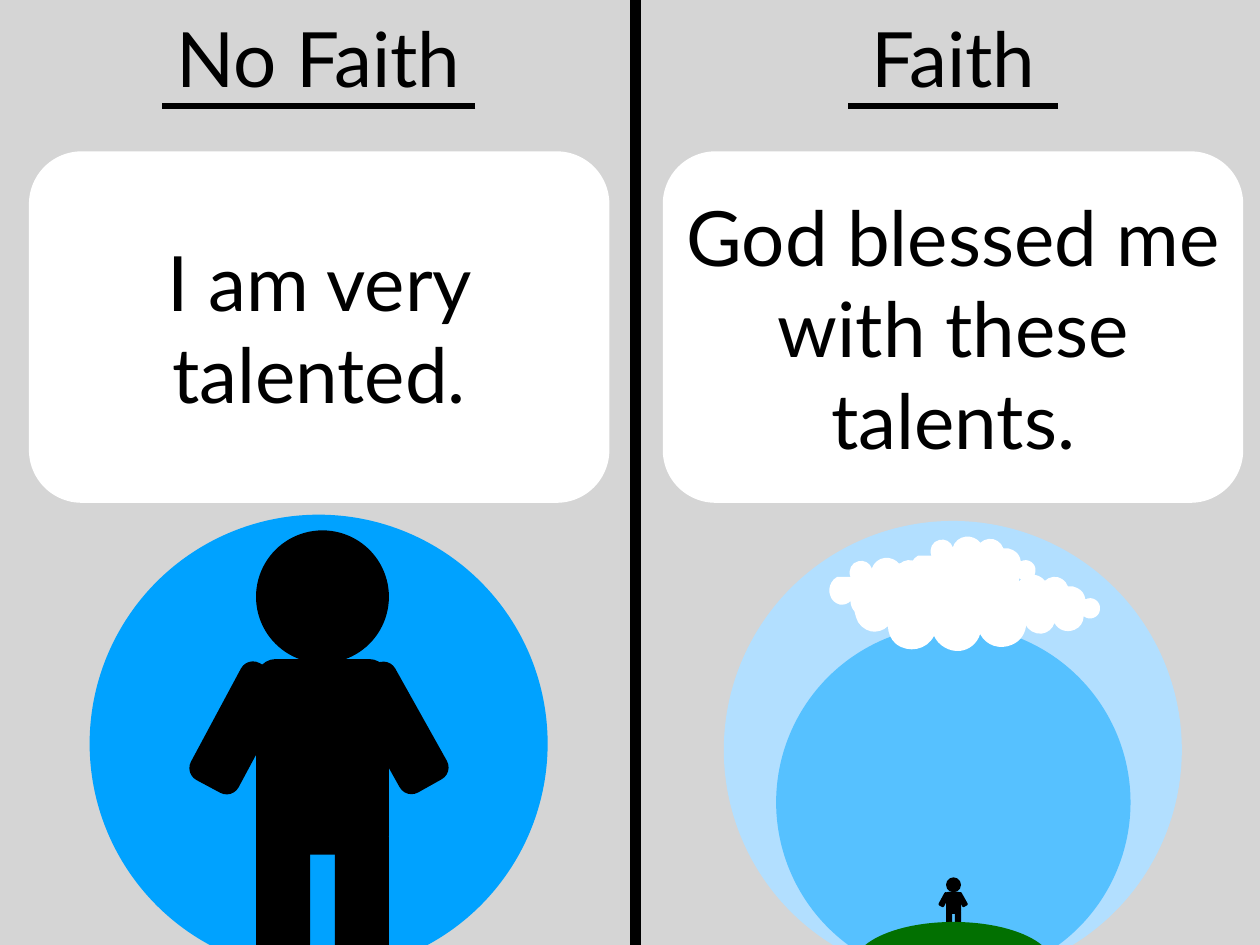
from dataclasses import dataclass

from lxml import etree
from pptx import Presentation
from pptx.dml.color import RGBColor
from pptx.enum.shapes import MSO_CONNECTOR, MSO_SHAPE
from pptx.enum.text import MSO_ANCHOR, MSO_AUTO_SIZE, PP_ALIGN
from pptx.oxml.ns import qn
from pptx.shapes.autoshape import Shape
from pptx.shapes.shapetree import GroupShapes, SlideShapes
from pptx.util import Cm, Pt

RECT, OVAL, ROUNDED = MSO_SHAPE.RECTANGLE, MSO_SHAPE.OVAL, MSO_SHAPE.ROUNDED_RECTANGLE
STRAIGHT = MSO_CONNECTOR.STRAIGHT
MIDDLE, CENTER = MSO_ANCHOR.MIDDLE, PP_ALIGN.CENTER
GROW = MSO_AUTO_SIZE.SHAPE_TO_FIT_TEXT

BLACK = RGBColor(0x00, 0x00, 0x00)
WHITE = RGBColor(0xFF, 0xFF, 0xFF)
GRAY = RGBColor(0xD5, 0xD5, 0xD5)
BLUE = RGBColor(0x00, 0xA2, 0xFF)
PALE_SKY = RGBColor(0xB2, 0xDF, 0xFF)
SKY = RGBColor(0x56, 0xC1, 0xFF)
GREEN = RGBColor(0x02, 0x70, 0x01)

WIDTH, HEIGHT = 36.12, 27.1

Point = tuple[float, float]
Box = tuple[float, float, float, float]
Shapes = SlideShapes | GroupShapes


@dataclass
class Part:
    box: Box
    corner: float
    rotation: float = 0


@dataclass
class Panel:
    title: str
    title_left: float
    underline: Point
    message: str
    bubble_left: float
    message_box: Box


HEAD = 3.81
LIMB = (1.55, 3.81)
BODY_PARTS = [
    Part((0, 3.69, HEAD, 5.61), 0.15),
    Part((0, 8.44, *LIMB), 0.25),
    Part((2.26, 8.44, *LIMB), 0.25),
    Part((-1.24, 3.76, *LIMB), 0.25, 28.2),
    Part((3.28, 3.76, *LIMB), 0.25, 330.8),
]

# Cloud edge: two control points and an end point, or one end point for a line
CLOUD_UNITS = 224
CLOUD_START = (2, 67)
CLOUD_EDGE = [
    ((4, 75), (11, 81), (19, 83)), ((26, 84), (33, 82), (38, 77)),
    ((38, 84), (41, 92), (47, 97)), ((61, 108), (82, 104), (90, 88)),
    ((95, 99), (107, 106), (119, 105)), ((130, 104), (139, 96), (142, 86)),
    ((149, 99), (164, 104), (178, 98)), ((188, 94), (194, 84), (194, 74)),
    ((205, 83), (222, 76), (223, 62)), ((225, 48), (210, 37), (197, 44)),
    ((196, 35), (191, 28), (183, 24)), ((178, 21), (172, 20), (166, 21)),
    ((162, 10), (152, 3), (140, 4)), ((134, 5), (129, 7), (125, 11)),
    ((119, 3), (109, -1), (99, 0)), ((88, 1), (79, 9), (76, 19)),
    ((73, 9), (62, 3), (52, 6)), ((40, 8), (33, 22), (38, 34)),
    ((14, 34),), ((10, 36), (6, 40), (4, 44)), ((0, 51), (-1, 60), (2, 67)),
]
CLOUDS = [(24.49, 16, 5.69), (23.77, 16, 3.61), (27.94, 16.48, 3.61), (26.09, 15.39, 3.61)]

PANELS = [
    Panel("No Faith", 1.09, (4.65, 13.63), "I am very talented.",
          0.83, (1.46, 6.28, 15.37, 6.2)),
    Panel("Faith", 19.28, (24.32, 30.33), "God blessed me with these talents.",
          19, (19.28, 4.8, 16.1, 9.17)),
]


def paint(sp: Shape, color: RGBColor) -> None:
    sp.shadow.inherit = False
    sp.fill.solid()
    sp.fill.fore_color.rgb = color
    sp.line.fill.background()


def add_filled(shapes: Shapes, kind: MSO_SHAPE, box: Box, color: RGBColor,
               corner: float | None = None, rotation: float = 0) -> None:
    sp = shapes.add_shape(kind, *(Cm(v) for v in box))
    paint(sp, color)
    sp.rotation = rotation
    if corner is not None:
        sp.adjustments[0] = corner


def add_line(shapes: Shapes, start: Point, end: Point, width: float) -> None:
    line = shapes.add_connector(STRAIGHT, *(Cm(v) for v in (*start, *end)))
    line.line.color.rgb = BLACK
    line.line.width = Pt(width)
    etree.SubElement(line._element.spPr, qn("a:effectLst"))


def add_text(shapes: Shapes, text: str, box: Box, *, size: float = 62,
             font: str = "Lato", color: RGBColor = BLACK) -> None:
    tf = shapes.add_textbox(*(Cm(v) for v in box)).text_frame
    tf.word_wrap = True
    tf.auto_size = GROW
    tf.vertical_anchor = MIDDLE
    tf.margin_left = tf.margin_right = tf.margin_top = tf.margin_bottom = Cm(0.15)
    p = tf.paragraphs[0]
    p.alignment = CENTER
    r = p.add_run()
    r.text = text
    r.font.size, r.font.name = Pt(size), font
    r.font.color.rgb = color


def add_person(shapes: Shapes, left: float, top: float, head: float) -> None:
    scale = head / HEAD
    add_filled(shapes, OVAL, (left, top, head, head), BLACK)
    for part in BODY_PARTS:
        x, y, w, h = (v * scale for v in part.box)
        add_filled(shapes, ROUNDED, (left + x, top + y, w, h), BLACK,
                   part.corner, part.rotation)


def add_cloud(shapes: Shapes, left: float, top: float, width: float) -> None:
    unit = width / CLOUD_UNITS

    def place(point: Point) -> tuple[Cm, Cm]:
        return Cm(left + point[0] * unit), Cm(top + point[1] * unit)

    builder = shapes.build_freeform(*place(CLOUD_START))
    builder.add_line_segments([place(piece[-1]) for piece in CLOUD_EDGE], close=True)
    sp = builder.convert_to_shape()
    paint(sp, WHITE)
    # Bend the straight segments into Bezier curves
    for segment, piece in zip(list(sp._element.iter(qn("a:lnTo"))), CLOUD_EDGE):
        if len(piece) == 1:
            continue
        segment.tag = qn("a:cubicBezTo")
        for i, control in enumerate(piece[:2]):
            x, y = place(control)
            pt = etree.Element(qn("a:pt"), x=str(x - sp.left), y=str(y - sp.top))
            segment.insert(i, pt)


def add_landscape(shapes: Shapes) -> None:
    add_filled(shapes, OVAL, (20.75, 14.94, 13.13, 13.13), PALE_SKY)
    add_filled(shapes, OVAL, (22.25, 17.93, 10.16, 10.16), SKY)
    add_person(shapes, 27.12, 25.16, 0.43)
    add_filled(shapes, OVAL, (24.49, 26.44, 5.69, 2.44), GREEN)
    for cloud in CLOUDS:
        add_cloud(shapes, *cloud)


def add_bubble(shapes: Shapes, panel: Panel) -> None:
    add_filled(shapes, ROUNDED, (panel.bubble_left, 4.34, 16.64, 10.08), WHITE, 0.15)
    add_text(shapes, panel.message, panel.message_box)


def add_title(shapes: Shapes, panel: Panel) -> None:
    add_text(shapes, panel.title, (panel.title_left, 0.01, 16.1, 3.25))
    start, end = panel.underline
    add_line(shapes, (end, 3.05), (start, 3.05), 5)


def main() -> None:
    prs = Presentation()
    prs.slide_width, prs.slide_height = Cm(WIDTH), Cm(HEIGHT)
    s = prs.slides.add_slide(prs.slide_layouts[6])

    add_filled(s.shapes, RECT, (0, -0.08, WIDTH, 27.23), GRAY)
    add_filled(s.shapes, OVAL, (2.57, 14.76, 13.13, 13.13), BLUE)
    add_person(s.shapes.add_group_shape().shapes, 7.34, 15.21, HEAD)
    add_landscape(s.shapes.add_group_shape().shapes)

    add_line(s.shapes, (18.23, 27.38), (18.23, -0.3), 9)
    for add_part in (add_bubble, add_title):
        for panel in PANELS:
            add_part(s.shapes.add_group_shape().shapes, panel)
    prs.save("out.pptx")


if __name__ == "__main__":
    main()
